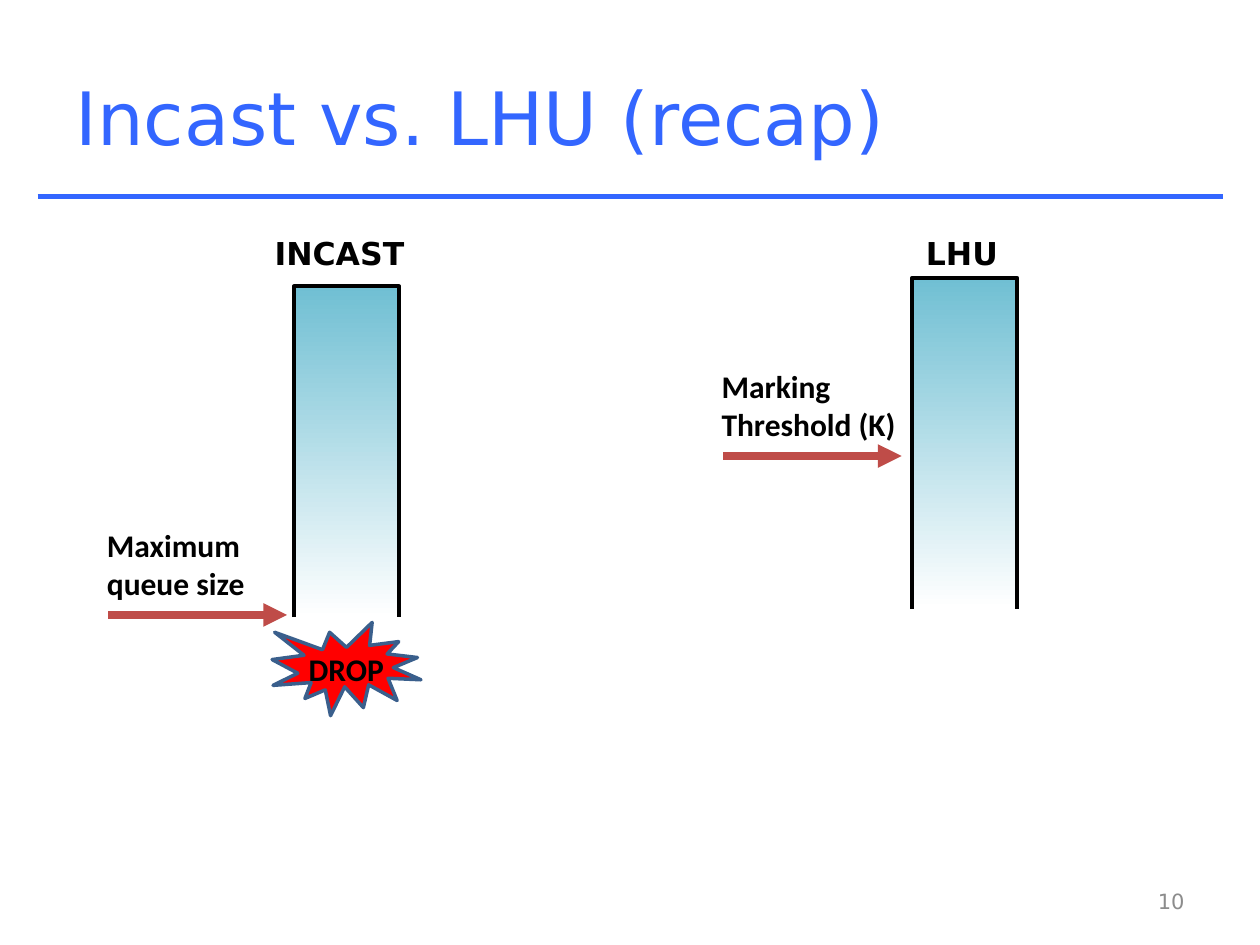
from pptx import Presentation
from pptx.dml.color import RGBColor
from pptx.enum.shapes import MSO_CONNECTOR, MSO_SHAPE
from pptx.enum.text import MSO_ANCHOR, MSO_AUTO_SIZE, PP_ALIGN
from pptx.oxml.ns import qn
from pptx.util import Pt
from lxml.etree import SubElement

BLUE = RGBColor(0x33, 0x66, 0xFF)
TEAL = RGBColor(0x70, 0xBF, 0xD3)
WHITE = RGBColor(0xFF, 0xFF, 0xFF)
BLACK = RGBColor(0x00, 0x00, 0x00)
BRICK = RGBColor(0xBF, 0x4C, 0x48)
RED = RGBColor(0xFF, 0x00, 0x00)
NAVY = RGBColor(0x3A, 0x5F, 0x8C)
GRAY = RGBColor(0x8C, 0x8C, 0x8C)

deck = Presentation()
deck.slide_width, deck.slide_height = Pt(720), Pt(540)
slide = deck.slides.add_slide(deck.slide_layouts[5])


def add_text(text, left, top, width, height, font="Calibri", size=18,
             color=BLACK, bold=True, wrap=True):
    label = slide.shapes.add_textbox(Pt(left), Pt(top), Pt(width), Pt(height))
    label.text_frame.word_wrap = wrap
    paragraph = label.text_frame.paragraphs[0]
    paragraph.text = text
    paragraph.font.name = font
    paragraph.font.size = Pt(size)
    paragraph.font.bold = bold
    paragraph.font.color.rgb = color
    return label.text_frame


def add_line(x1, x2, y, color, width):
    line = slide.shapes.add_connector(
        MSO_CONNECTOR.STRAIGHT, Pt(x1), Pt(y), Pt(x2), Pt(y))
    line.line.color.rgb = color
    line.line.width = Pt(width)
    SubElement(line._element.spPr, qn("a:effectLst"))
    return line


add_line(21.5, 699, 112.5, BLUE, 3)

title = slide.shapes.title
title.left, title.top, title.width, title.height = Pt(36), Pt(21.6), Pt(648), Pt(90)
title.text_frame.auto_size = MSO_AUTO_SIZE.NONE
title.text_frame.vertical_anchor = MSO_ANCHOR.MIDDLE
heading = title.text_frame.paragraphs[0]
heading.text = "Incast vs. LHU (recap)"
heading.alignment = PP_ALIGN.LEFT
heading.font.name = "DejaVu Sans"
heading.font.size = Pt(42)
heading.font.color.rgb = BLUE

QUEUE_WIDTH, QUEUE_HEIGHT = 60, 189
queues = [
    ("INCAST", 149.8, 92.2, 168, 163.7, "Maximum queue size", 62, 351.4),
    ("LHU", 522, 56.2, 521.2, 158.8, "Marking Threshold (K)", 413.2, 260.6),
]
for name, name_left, name_width, left, top, limit, arrow_left, arrow_y in queues:
    right, bottom = left + QUEUE_WIDTH, top + QUEUE_HEIGHT
    outline = slide.shapes.build_freeform(Pt(left), Pt(bottom))
    outline.add_line_segments(
        [(Pt(left), Pt(top)), (Pt(right), Pt(top)), (Pt(right), Pt(bottom))],
        close=False)
    queue = outline.convert_to_shape()
    queue.shadow.inherit = False
    queue.fill.gradient()
    queue.fill.gradient_angle = 270
    for stop, color in zip(queue.fill.gradient_stops, (TEAL, WHITE)):
        stop.color.rgb = color
    queue.line.color.rgb = BLACK
    queue.line.width = Pt(2.25)

    arrow = add_line(arrow_left, arrow_left + 102, arrow_y, BRICK, 4.5)
    SubElement(arrow.line._get_or_add_ln(), qn("a:tailEnd"), type="triangle")
    add_text(limit, arrow_left - 8, arrow_y - 54.5, 120, 51)
    add_text(name, name_left, 130.3, name_width, 29, font="DejaVu Sans", wrap=False)

burst = slide.shapes.add_shape(
    MSO_SHAPE.EXPLOSION1, Pt(155.5), Pt(355.7), Pt(85), Pt(53.3))
burst.shadow.inherit = False
burst.fill.solid()
burst.fill.fore_color.rgb = RED
burst.line.color.rgb = NAVY
burst.line.width = Pt(2)
add_text("DROP", 169.2, 368, 65.5, 29)

page = add_text("10", 516, 500.4, 168, 28.8, font="DejaVu Sans", size=12,
                color=GRAY, bold=False)
page.vertical_anchor = MSO_ANCHOR.MIDDLE
page.paragraphs[0].alignment = PP_ALIGN.RIGHT

deck.save("out.pptx")
